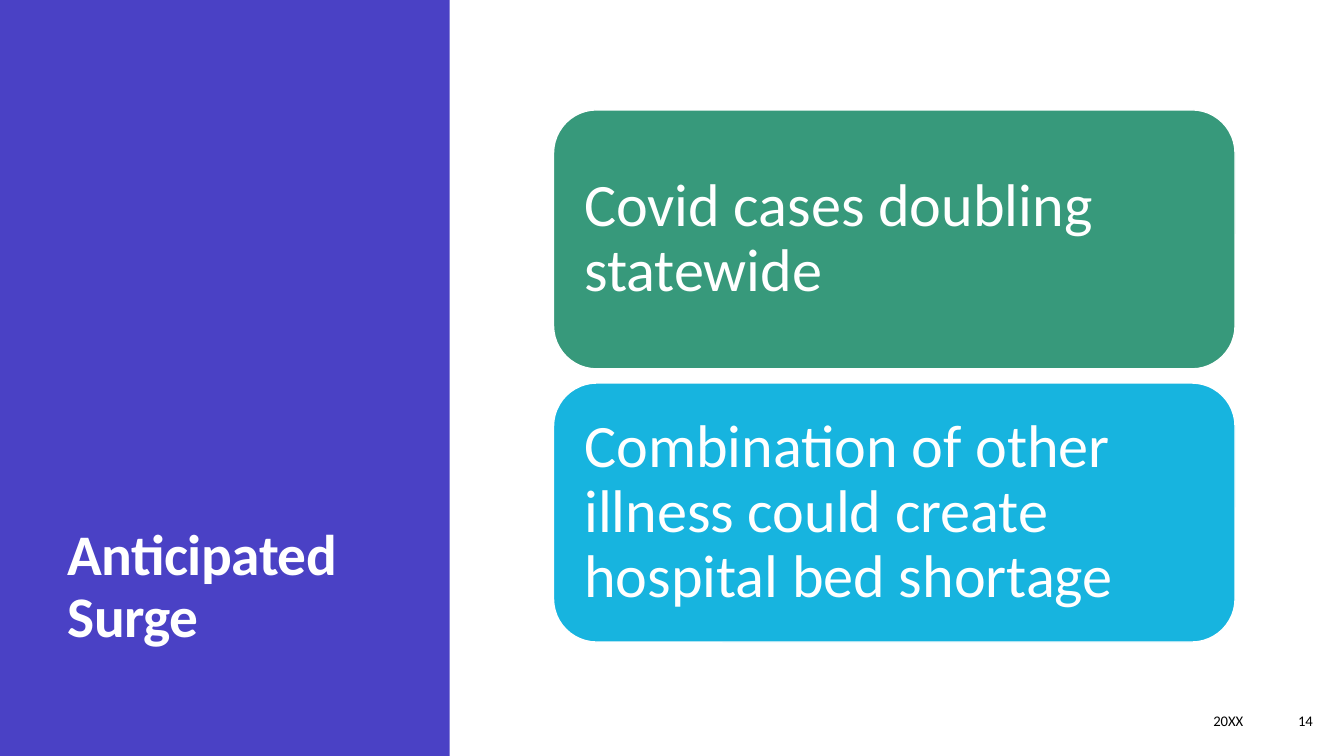
from pptx import Presentation
from pptx.dml.color import RGBColor
from pptx.enum.shapes import MSO_SHAPE
from pptx.enum.text import MSO_ANCHOR, MSO_AUTO_SIZE, PP_ALIGN
from pptx.util import Inches, Pt

RECTANGLE, ROUNDED = MSO_SHAPE.RECTANGLE, MSO_SHAPE.ROUNDED_RECTANGLE
MIDDLE, BOTTOM = MSO_ANCHOR.MIDDLE, MSO_ANCHOR.BOTTOM
LEFT, RIGHT = PP_ALIGN.LEFT, PP_ALIGN.RIGHT
FIXED_SIZE = MSO_AUTO_SIZE.NONE
TITLE_ONLY = 5


def rgb(hex_string):
    """Turn a hex string into a colour."""
    return RGBColor.from_string(hex_string)


def write(frame, text, size, color, font, bold=False, align=LEFT,
          anchor=MIDDLE, line_spacing=1.0, tracking=None):
    """Put formatted text into a text frame."""
    frame.word_wrap = True
    frame.auto_size = FIXED_SIZE
    frame.vertical_anchor = anchor
    paragraph = frame.paragraphs[0]
    paragraph.alignment = align
    paragraph.line_spacing = line_spacing
    run = paragraph.add_run()
    run.text = text
    run.font.name = font
    run.font.size = Pt(size)
    run.font.bold = bold
    run.font.color.rgb = rgb(color)
    if tracking is not None:
        run.font._element.set("spc", str(round(tracking * 100)))


class SlideBuilder:
    """Hold the slide and its style, and add its elements."""

    font = "Calibri"
    white = "FFFFFF"
    black = "000000"
    violet = "4A41C5"

    def __init__(self, presentation):
        """Add a slide with a title placeholder."""
        self.slide = presentation.slides.add_slide(
            presentation.slide_layouts[TITLE_ONLY])

    def block(self, kind, left, top, width, height, fill):
        """Add a filled shape without an outline or shadow."""
        block = self.slide.shapes.add_shape(
            kind, Inches(left), Inches(top), Inches(width), Inches(height))
        block.shadow.inherit = False
        block.fill.solid()
        block.fill.fore_color.rgb = rgb(fill)
        block.line.fill.background()
        return block

    def title_panel(self, text):
        """Set the title on a full-height coloured panel."""
        title = self.slide.shapes.title
        panel = self.block(RECTANGLE, 0, 0, 4.46, 7.5, self.violet)
        title.element.addprevious(panel.element)
        title.left, title.top = Inches(0.57), Inches(0.51)
        title.width, title.height = Inches(3.45), Inches(5.99)
        write(title.text_frame, text, 41, self.white, self.font, bold=True,
              anchor=BOTTOM, line_spacing=0.9, tracking=-0.4)

    def card(self, text, top, fill):
        """Add a rounded card with a statement in it."""
        card = self.block(ROUNDED, 5.49, top, 6.76, 2.57, fill)
        card.line.color.rgb = rgb(self.white)
        card.line.width = Pt(1)
        frame = card.text_frame
        frame.margin_left = frame.margin_right = Inches(0.18)
        write(frame, text, 43, self.white, self.font, line_spacing=0.9)

    def footer(self, text, left, width):
        """Add a right-aligned footer text."""
        footer = self.slide.shapes.add_textbox(
            Inches(left), Inches(6.95), Inches(width), Inches(0.4))
        write(footer.text_frame, text, 10.5, self.black, self.font,
              align=RIGHT)


def main():
    """Build and save the slide."""
    presentation = Presentation()
    presentation.slide_width = Inches(13.33)
    presentation.slide_height = Inches(7.5)

    builder = SlideBuilder(presentation)
    builder.title_panel("Anticipated Surge")

    statements = [
        ("Covid cases doubling statewide", "37997B"),
        ("Combination of other illness could create hospital bed shortage",
         "17B4DF"),
    ]
    for index, (statement, fill) in enumerate(statements):
        builder.card(statement, 1.09 + index * 2.71, fill)

    builder.footer("20XX", 7.67, 4.76)
    builder.footer("14", 12.43, 0.69)
    presentation.save("out.pptx")


if __name__ == "__main__":
    main()
